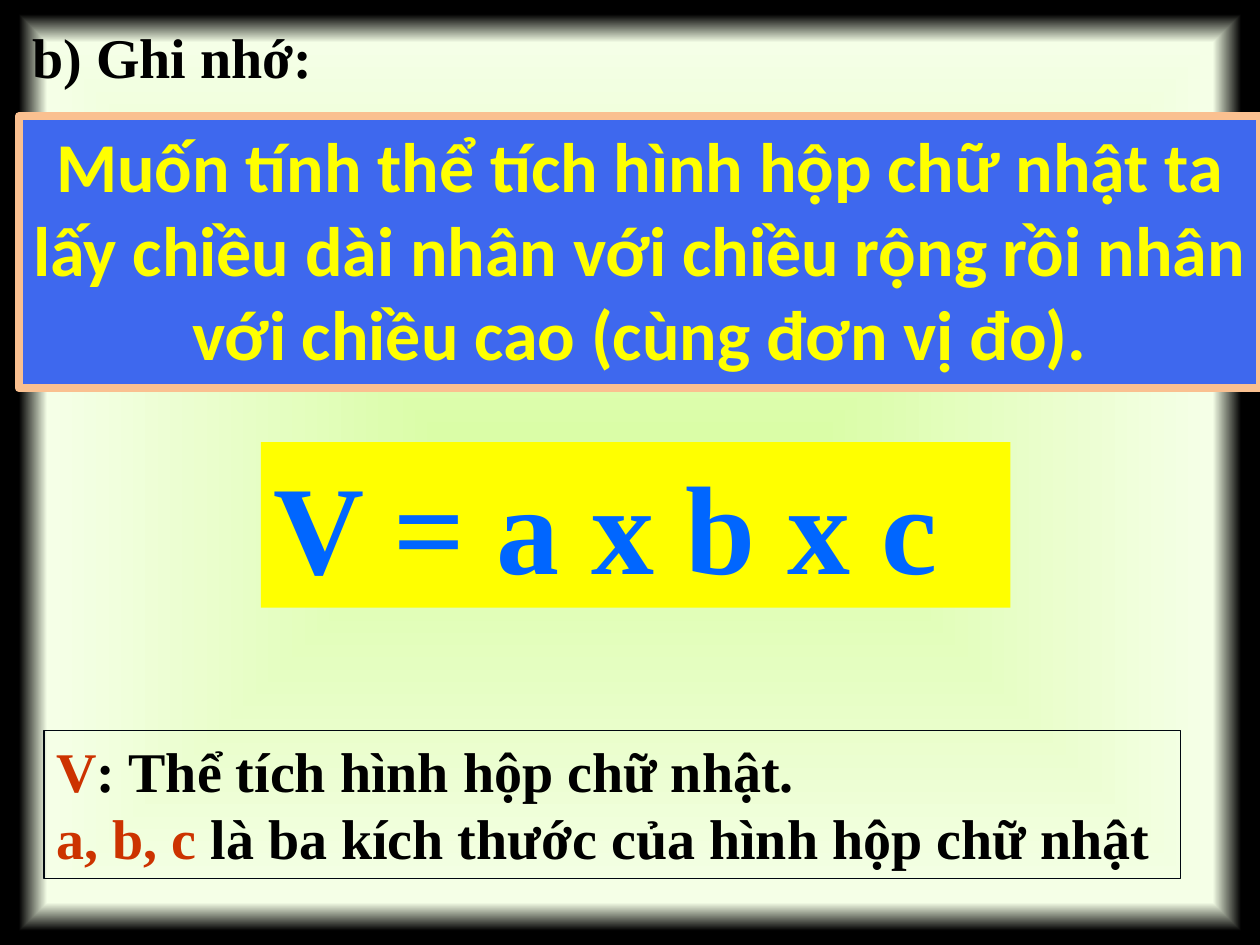
from lxml import etree
from pptx import Presentation
from pptx.dml.color import RGBColor as RGB
from pptx.enum.shapes import MSO_SHAPE as Shape
from pptx.enum.text import MSO_ANCHOR as Anchor, MSO_AUTO_SIZE as AutoSize, PP_ALIGN as Align
from pptx.oxml import parse_xml
from pptx.oxml.ns import nsdecls, qn
from pptx.util import Inches, Pt

WIDTH, HEIGHT = 10, 7.5
COLORS = {
    "lime": "DAFDA7", "pale": "F5FFE7", "black": "000000", "yellow": "FFFF00",
    "formula": "0066FF", "symbol": "CC3300", "frame": "000810",
    "blue": "3E68EE", "peach": "FAC090",
}
SERIF, SANS = "Times New Roman", "Calibri"


def color(name):
    return RGB.from_string(COLORS[name])


def area(left, top, width, height):
    """Turn shares of the slide's size into lengths."""
    return (Inches(left * WIDTH), Inches(top * HEIGHT),
            Inches(width * WIDTH), Inches(height * HEIGHT))


def paint_background(page):
    """Glow from the centre, fading into a dark edge."""
    stops = ((8, "lime", 100), (91, "pale", 100), (97, "black", 0))
    stop_xml = "".join(
        f'<a:gs pos="{place * 1000}"><a:srgbClr val="{COLORS[name]}">'
        f'<a:alpha val="{opacity * 1000}"/></a:srgbClr></a:gs>'
        for place, name, opacity in stops)
    gradient = parse_xml(
        f'<a:gradFill {nsdecls("a")} rotWithShape="1"><a:gsLst>{stop_xml}</a:gsLst>'
        '<a:path path="shape"><a:fillToRect l="50000" t="50000" r="50000" b="50000"/>'
        '</a:path></a:gradFill>')
    fill = page.background.fill
    fill.solid()
    old = page.element.find(".//" + qn("a:solidFill"))
    old.getparent().replace(old, gradient)


def add_panel(page, box, fill=None, line=None, weight=0):
    panel = page.shapes.add_shape(Shape.RECTANGLE, *area(*box))
    panel.shadow.inherit = False
    if fill:
        panel.fill.solid()
        panel.fill.fore_color.rgb = color(fill)
    else:
        panel.fill.background()
    if line:
        panel.line.color.rgb = color(line)
        panel.line.width = Pt(weight)
    else:
        panel.line.fill.background()
    return panel


def write(shape, lines, size, font, align=Align.LEFT, space_before=0, wrap=True):
    """Write lines, each a list of (text, colour) spans."""
    frame = shape.text_frame
    layout = {"word_wrap": wrap, "auto_size": AutoSize.SHAPE_TO_FIT_TEXT,
              "vertical_anchor": Anchor.TOP}
    for key, value in layout.items():
        setattr(frame, key, value)
    style = {"name": font, "size": Pt(size), "bold": True}
    for number, spans in enumerate(lines):
        para = frame.add_paragraph() if number else frame.paragraphs[0]
        para.alignment = align
        if space_before:
            spacing = etree.SubElement(para._p.get_or_add_pPr(), qn("a:spcBef"))
            etree.SubElement(spacing, qn("a:spcPct"), val=str(space_before * 1000))
        for text, name in spans:
            span = para.add_run()
            span.text = text
            for key, value in style.items():
                setattr(span.font, key, value)
            span.font.color.rgb = color(name)


def add_formula(page, box):
    panel = add_panel(page, box, fill="yellow")
    write(panel, [[("V = a x b x c", "formula")]], 72, SERIF, space_before=50)


def add_legend(page, box):
    panel = add_panel(page, box, line="frame", weight=0.75)
    write(panel, [
        [("V", "symbol"), (": Thể tích hình hộp chữ nhật.", "black")],
        [("a, b, c ", "symbol"), ("là ba kích thước của hình hộp chữ nhật", "black")],
    ], 32, SERIF)


def add_rule(page, box):
    panel = add_panel(page, box, fill="blue", line="peach", weight=4.5)
    rule = ("Muốn tính thể tích hình hộp chữ nhật ta lấy chiều dài nhân với "
            "chiều rộng rồi nhân với chiều cao (cùng đơn vị đo).")
    write(panel, [[(rule, "yellow")]], 40, SANS, Align.CENTER, space_before=50)


def add_heading(page, box):
    heading = page.shapes.add_textbox(*area(*box))
    write(heading, [[("b) Ghi nhớ:", "black")]], 32, SERIF, wrap=False)


def main():
    deck = Presentation()
    deck.slide_width, deck.slide_height = Inches(WIDTH), Inches(HEIGHT)
    page = deck.slides.add_slide(deck.slide_layouts[6])
    paint_background(page)
    # Boxes as shares of the slide: left, top, width, height
    add_formula(page, (0.207, 0.468, 0.595, 0.175))
    add_legend(page, (0.035, 0.773, 0.902, 0.157))
    add_rule(page, (0.015, 0.123, 0.985, 0.288))
    add_heading(page, (0.016, 0.017, 0.256, 0.085))
    deck.save("out.pptx")


if __name__ == "__main__":
    main()
